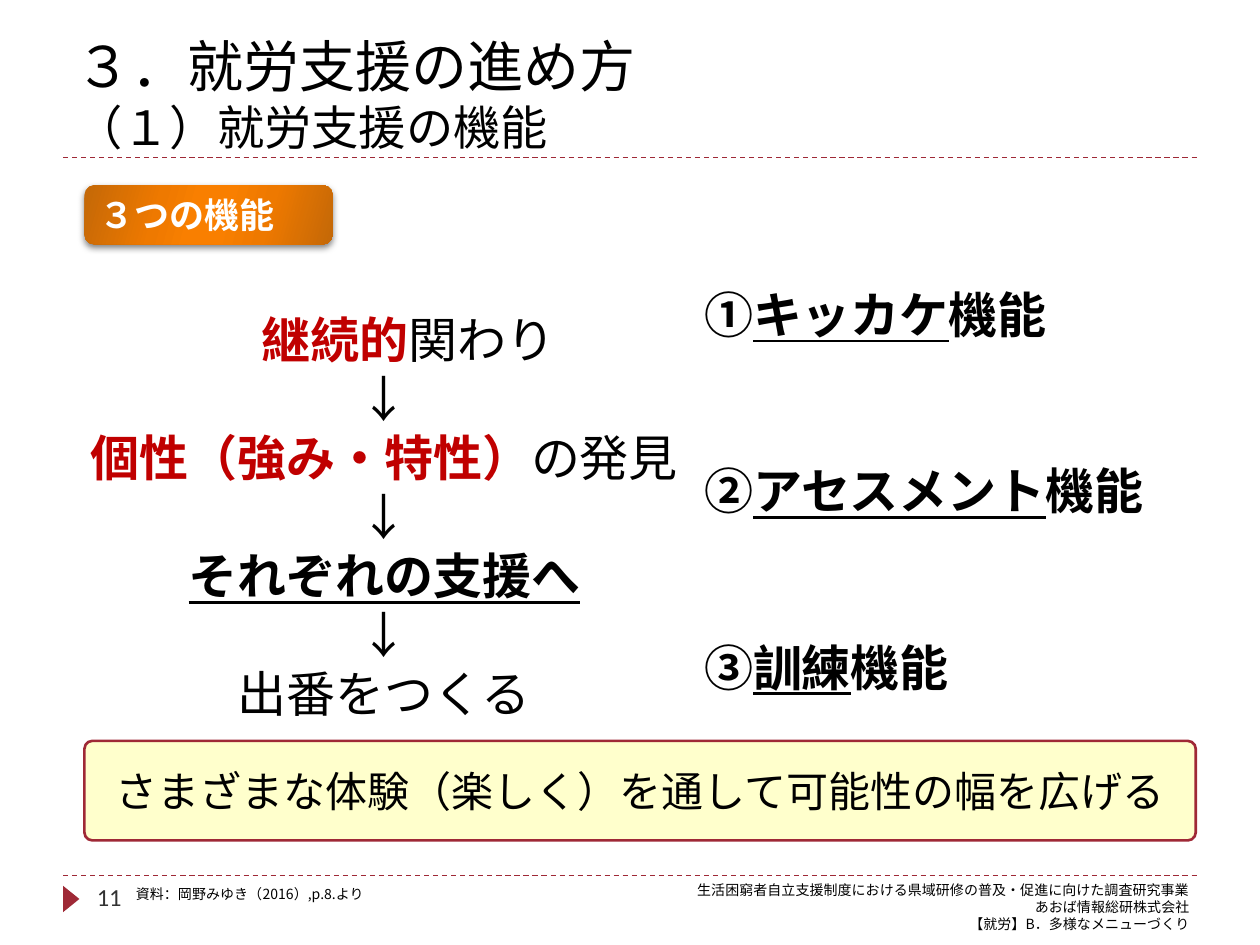
from dataclasses import dataclass

from lxml.etree import SubElement
from pptx import Presentation
from pptx.dml.color import RGBColor
from pptx.enum.dml import MSO_LINE
from pptx.enum.shapes import MSO_CONNECTOR, MSO_SHAPE
from pptx.enum.text import MSO_ANCHOR, PP_ALIGN
from pptx.oxml import parse_xml
from pptx.oxml.ns import nsdecls, qn
from pptx.util import Inches, Pt


@dataclass(frozen=True)
class Theme:
    font: str = "Noto Sans CJK JP"
    number_font: str = "Calibri"
    black: str = "000000"
    white: str = "FFFFFF"
    gray: str = "323232"
    maroon: str = "9F2936"
    red: str = "C00000"
    cream: str = "FFFFCC"
    badge: tuple = ((0, "C46807"), (30, "EE7900"), (45, "F97F00"),
                    (55, "F97F00"), (73, "EE7900"), (100, "C46807"))
    title: int = 32
    subtitle: int = 27
    body: int = 28
    message: int = 24
    label: int = 20
    number: int = 14
    note: int = 8


T = Theme()
BOLD = dict(bold=True)
UNDER = dict(bold=True, underline=True)
RED = dict(bold=True, color=T.red)


def rgb(value):
    return RGBColor.from_string(value)


def write(s, paragraphs, size=T.body, color=T.black, font=T.font, bold=False,
          align=PP_ALIGN.LEFT, anchor=MSO_ANCHOR.TOP, leading=None, gap=0,
          bottom=0.05):
    """Fill s with paragraphs, each a list of (text, run format) pairs."""
    tf = s.text_frame
    tf.word_wrap = True
    tf.vertical_anchor = anchor
    tf.margin_bottom = Inches(bottom)
    for i, runs in enumerate(paragraphs):
        p = tf.paragraphs[0] if i == 0 else tf.add_paragraph()
        p.alignment = align
        if leading:
            p.line_spacing = Pt(leading)
        if i:
            p.space_before = Pt(gap)
        for text, fmt in runs:
            r = p.add_run()
            r.text = text
            r.font.size = Pt(fmt.get("size", size))
            r.font.bold = fmt.get("bold", bold)
            r.font.underline = fmt.get("underline", False)
            r.font.color.rgb = rgb(fmt.get("color", color))
            r.font.name = font
            SubElement(r.font._element, qn("a:ea")).set("typeface", font)


def add_text(slide, box, paragraphs, **fmt):
    s = slide.shapes.add_textbox(*map(Inches, box))
    write(s, paragraphs, **fmt)


def add_box(slide, kind, box, fill=None, line=None):
    s = slide.shapes.add_shape(kind, *map(Inches, box))
    s.shadow.inherit = False
    if fill:
        s.fill.solid()
        s.fill.fore_color.rgb = rgb(fill)
    if line:
        s.line.color.rgb = rgb(line)
        s.line.width = Pt(1.5)
    else:
        s.line.fill.background()
    return s


def add_rule(slide, y):
    s = slide.shapes.add_connector(MSO_CONNECTOR.STRAIGHT, Inches(0.5),
                                   Inches(y), Inches(9.5), Inches(y))
    s.line.color.rgb = rgb(T.maroon)
    s.line.width = Pt(0.75)
    s.line.dash_style = MSO_LINE.DASH
    SubElement(s._element.spPr, qn("a:effectLst"))


def add_badge(slide, box, text):
    s = add_box(slide, MSO_SHAPE.ROUNDED_RECTANGLE, box)
    # Gradient with more than two stops
    s.fill.gradient()
    grad = s._element.spPr.find(qn("a:gradFill"))
    stops = "".join(f'<a:gs pos="{pos * 1000}"><a:srgbClr val="{c}"/></a:gs>'
                    for pos, c in T.badge)
    grad.getparent().replace(grad, parse_xml(
        f'<a:gradFill {nsdecls("a")} rotWithShape="1"><a:gsLst>{stops}</a:gsLst>'
        '<a:lin ang="960000" scaled="0"/></a:gradFill>'))
    # Soft shadow below
    s._element.spPr.find(qn("a:effectLst")).append(parse_xml(
        f'<a:outerShdw {nsdecls("a")} blurRad="{Pt(4)}" dist="{Pt(2)}" '
        'dir="5400000" rotWithShape="0"><a:srgbClr val="000000">'
        '<a:alpha val="50000"/></a:srgbClr></a:outerShdw>'))
    write(s, [[(text, {})]], size=T.label, color=T.white, bold=True,
          anchor=MSO_ANCHOR.MIDDLE)


def main():
    prs = Presentation()
    prs.slide_width, prs.slide_height = Inches(10), Inches(7.5)
    slide = prs.slides.add_slide(prs.slide_layouts[6])

    # Frame: rules, page marker and number
    for y in (6.95, 1.25):
        add_rule(slide, y)
    marker = add_box(slide, MSO_SHAPE.ISOSCELES_TRIANGLE,
                     (0.46, 7.07, 0.21, 0.13), fill=T.maroon)
    marker.rotation = 90
    add_text(slide, (0.67, 6.95, 2.17, 0.4), [[("11", {})]],
             size=T.number, color=T.gray, font=T.number_font)

    # Title
    add_text(slide, (0.5, 0.17, 9.15, 1.08),
             [[("３．就労支援の進め方", {})],
              [("（１）就労支援の機能", dict(size=T.subtitle))]],
             size=T.title, anchor=MSO_ANCHOR.BOTTOM, leading=32, bottom=0.02)
    add_badge(slide, (0.67, 1.47, 1.97, 0.47), "３つの機能")

    # Three functions
    functions = (("①", "キッカケ"), ("②", "アセスメント"), ("③", "訓練"))
    add_text(slide, (5.49, 2.21, 3.92, 3.4),
             [[(mark, BOLD), (name, UNDER), ("機能", BOLD)]
              for mark, name in functions],
             leading=33.6, gap=67.2)

    # Steps joined by arrows
    steps = [[("\u3000".replace("\u3000", "　"), RED), ("継続的", RED), ("関わり", {})],
             [("個性（強み・特性）", RED), ("の発見", {})],
             [("それぞれの支援へ", UNDER)],
             [("出番をつくる", {})]]
    flow = steps[:1]
    for step in steps[1:]:
        flow += [[("↓", {})], step]
    add_text(slide, (-0.35, 2.41, 6.8, 3.5), flow,
             align=PP_ALIGN.CENTER, leading=33.7)

    # Key message
    s = add_box(slide, MSO_SHAPE.ROUNDED_RECTANGLE, (0.67, 5.88, 8.82, 0.79),
                fill=T.cream, line=T.maroon)
    s.adjustments[0] = 0.08
    write(s, [[("さまざまな体験（楽しく）を通して可能性の幅を広げる", {})]],
          size=T.message, align=PP_ALIGN.CENTER, anchor=MSO_ANCHOR.MIDDLE)

    # Source and credits
    add_text(slide, (0.98, 6.98, 4.41, 0.24),
             [[("資料：岡野みゆき（2016）,p.8.より", {})]],
             size=T.note, leading=9.6)
    credits = ("生活困窮者自立支援制度における県域研修の普及・促進に向けた調査研究事業",
               "あおば情報総研株式会社",
               "【就労】B．多様なメニューづくり")
    add_text(slide, (3.17, 6.95, 6.37, 0.4), [[(c, {})] for c in credits],
             size=T.note, align=PP_ALIGN.RIGHT, leading=9.6)

    prs.save("out.pptx")


if __name__ == "__main__":
    main()
